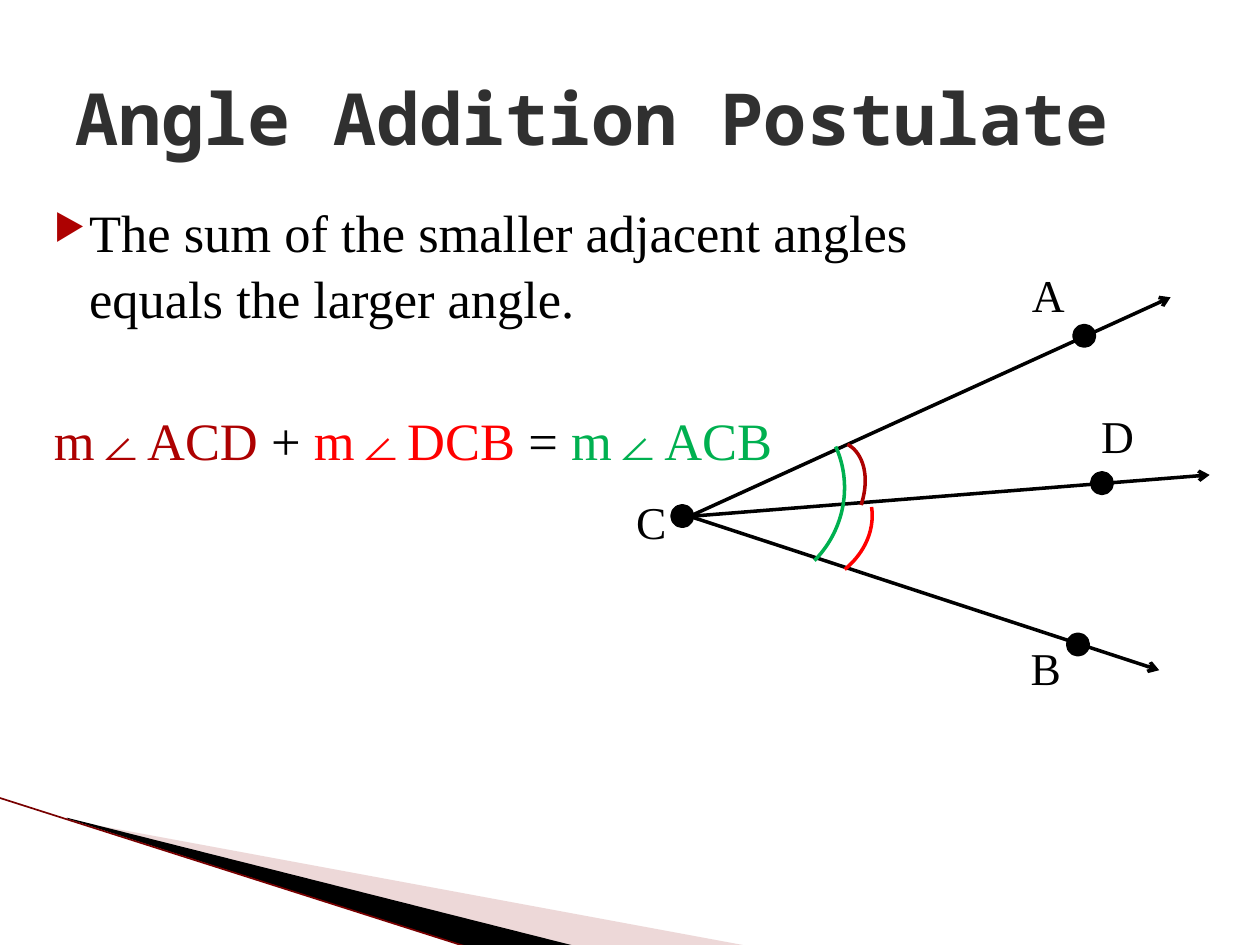
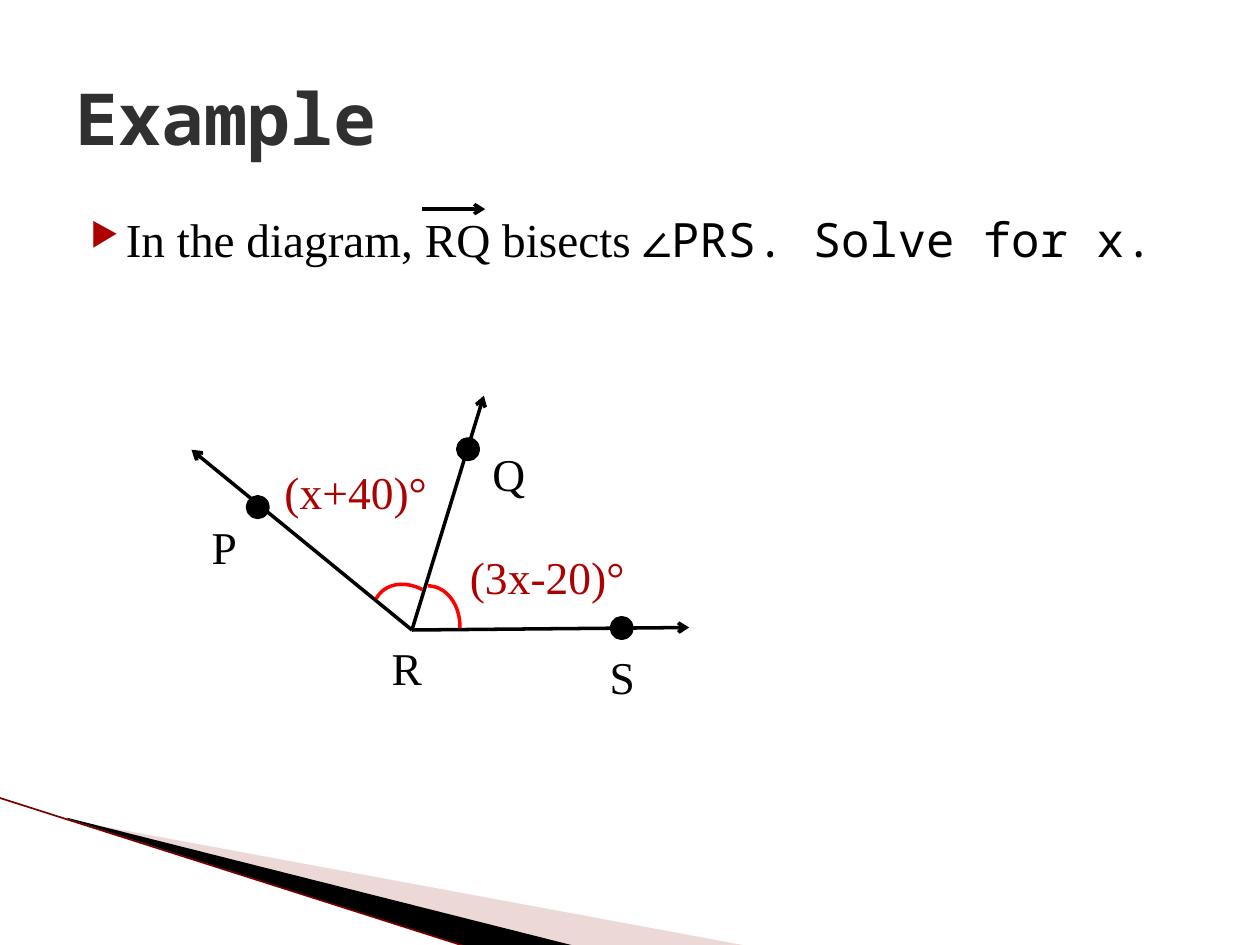
"""Build two geometry slides: the angle addition postulate and a bisector example."""
from lxml import etree
from pptx import Presentation
from pptx.dml.color import RGBColor
from pptx.enum.shapes import MSO_CONNECTOR, MSO_SHAPE
from pptx.enum.text import MSO_ANCHOR
from pptx.oxml.ns import qn
from pptx.util import Pt

STRAIGHT = MSO_CONNECTOR.STRAIGHT
ELLIPSE = MSO_SHAPE.OVAL
ARC = MSO_SHAPE.ARC
MIDDLE = MSO_ANCHOR.MIDDLE

SERIF = "Times New Roman"
MONO = "Noto Sans Mono"
BLACK = "000000"
CRIMSON = "AD0101"
RED = "FF0000"
GREEN = "00B050"
TITLE_GREY = "303030"
EDGE_RED = "780000"
BAND_PINK = "D29E9E"

DOT_SIZE = 9.4
LABEL_HEIGHT = 39

color = RGBColor.from_string


def add_line(page, start, end, line_color, width, arrow=True):
    line = page.shapes.add_connector(STRAIGHT, *(Pt(v) for v in start + end))
    line.line.color.rgb = color(line_color)
    line.line.width = Pt(width)
    if arrow:
        etree.SubElement(line.line._get_or_add_ln(), qn("a:tailEnd"), type="arrow")
    etree.SubElement(line._element.spPr, qn("a:effectLst"))


def add_text(page, frame, paragraphs, size, bold=False):
    box = page.shapes.add_textbox(*(Pt(v) for v in frame))
    box.text_frame.word_wrap = True
    for number, spans in enumerate(paragraphs):
        para = box.text_frame.paragraphs[0] if number == 0 else box.text_frame.add_paragraph()
        for text, font_name, font_color in spans:
            span = para.add_run()
            span.text = text
            span.font.name = font_name
            span.font.color.rgb = color(font_color)
        para.font.size = Pt(size)
        para.font.bold = bold
    return box


slides = [
    {
        "title": "Angle Addition Postulate",
        "body_frame": (15.1, 109.5, 549.4, 177.8),
        "body_size": 30,
        "line_spacing": 1.04,
        "body": [
            [("The sum of the smaller adjacent angles equals the larger angle.", SERIF, BLACK)],
            [
                ("m∠ACD ", SERIF, CRIMSON),
                ("+ ", SERIF, BLACK),
                ("m∠DCB ", SERIF, RED),
                ("= ", SERIF, BLACK),
                ("m∠ACB", SERIF, GREEN),
            ],
        ],
        "rays": [
            ((392.4, 295.2), (691.2, 271.4)),
            ((392.4, 294.5), (662.4, 383)),
            ((395.3, 294.5), (668.9, 169.9)),
        ],
        "dots": [(385.2, 290.2), (625, 271.4), (611.3, 363.6), (614.9, 187.2)],
        "labels": [
            ("A", 582.5, 149, 26, BLACK),
            ("B", 581.8, 362.2, 26, BLACK),
            ("C", 356.4, 278.6, 26, BLACK),
            ("D", 622.1, 229.7, 26, BLACK),
        ],
        "arcs": [
            ((441.4, 249.1, 49.7, 73.4), 29.5, 162, 202.02, CRIMSON),
            ((407.5, 247, 82.1, 100.1), 81.6, 162, 190.86, RED),
            ((367.9, 221.8, 113.8, 117.4), 44.5, 173.92, 0, GREEN),
        ],
    },
    {
        "title": "Example",
        "body_frame": (36, 116.6, 648, 356.4),
        "body_size": 27,
        "line_spacing": 1.0,
        "body": [
            [
                ("In the diagram, RQ bisects ", SERIF, BLACK),
                ("∠PRS. Solve for x.", MONO, BLACK),
            ],
        ],
        "rays": [
            ((235.4, 360), (109.4, 257)),
            ((235.4, 360), (393.8, 358.6)),
            ((235.4, 360), (276.5, 226.1)),
            ((241.2, 119.5), (277.2, 119.5)),
        ],
        "dots": [(142.6, 285.1), (262.8, 252), (350.6, 354.2)],
        "labels": [
            ("P", 113.8, 293, 31, BLACK),
            ("Q", 274.3, 251.3, 31, BLACK),
            ("R", 216.7, 362.2, 31, BLACK),
            ("S", 341.3, 367.2, 28, BLACK),
            ("(x+40)°", 155.5, 261.4, 117.4, CRIMSON),
            ("(3x-20)°", 261.4, 310.3, 131.8, CRIMSON),
        ],
        "arcs": [
            ((216, 331.2, 38.2, 49), 313.7, 156.16, 200.72, RED),
            ((224.6, 334.8, 38.2, 49), 5.4, 159.96, 212.09, RED),
        ],
    },
]

bands = [
    ([(39.6, 468.7), (428.4, 540.7), (328.3, 540.7), (39.6, 468)], BAND_PINK, 40),
    ([(38.2, 467.3), (329, 540.7), (267.8, 541.4), (38.9, 468)], BLACK, 100),
]

deck = Presentation()
deck.slide_width = Pt(720)
deck.slide_height = Pt(540)

for content in slides:
    page = deck.slides.add_slide(deck.slide_layouts[6])

    for corners, band_color, opacity in bands:
        points = [(Pt(x), Pt(y)) for x, y in corners]
        builder = page.shapes.build_freeform(*points[0])
        builder.add_line_segments(points[1:], close=True)
        band = builder.convert_to_shape()
        band.shadow.inherit = False
        band.line.fill.background()
        band.fill.solid()
        band.fill.fore_color.rgb = color(band_color)
        if opacity < 100:
            fill_color = band._element.spPr.find(".//" + qn("a:srgbClr"))
            etree.SubElement(fill_color, qn("a:alpha"), val=str(opacity * 1000))
    add_line(page, (-0.7, 455.8), (267.8, 541.4), EDGE_RED, 0.95, arrow=False)

    body = add_text(page, content["body_frame"], content["body"], content["body_size"])
    for number, para in enumerate(body.text_frame.paragraphs):
        para.line_spacing = content["line_spacing"]
        if number:
            para.space_before = Pt(44)
        properties = para._p.get_or_add_pPr()
        properties.set("marL", str(Pt(28.8)))
        properties.set("indent", str(Pt(-20.16)))
        if number == 0:
            bullet_color = etree.Element(qn("a:buClr"))
            etree.SubElement(bullet_color, qn("a:srgbClr"), val=CRIMSON)
            bullet_size = etree.Element(qn("a:buSzPct"), val="68000")
            bullet = etree.Element(qn("a:buChar"), char="▶")
            defaults = properties.find(qn("a:defRPr"))
            for element in (bullet_color, bullet_size, bullet):
                defaults.addprevious(element)

    title_spans = [[(content["title"], MONO, TITLE_GREY)]]
    title = add_text(page, (36, 21.6, 648, 90), title_spans, 41, bold=True)
    title.text_frame.vertical_anchor = MIDDLE

    for start, end in content["rays"]:
        add_line(page, start, end, BLACK, 2)

    for left, top in content["dots"]:
        dot = page.shapes.add_shape(ELLIPSE, Pt(left), Pt(top), Pt(DOT_SIZE), Pt(DOT_SIZE))
        dot.shadow.inherit = False
        dot.fill.solid()
        dot.fill.fore_color.rgb = color(BLACK)
        dot.line.color.rgb = color(BLACK)
        dot.line.width = Pt(4.33)

    for text, left, top, width, label_color in content["labels"]:
        add_text(page, (left, top, width, LABEL_HEIGHT), [[(text, SERIF, label_color)]], 26)

    for frame, rotation, start_angle, end_angle, arc_color in content["arcs"]:
        arc = page.shapes.add_shape(ARC, *(Pt(v) for v in frame))
        arc.shadow.inherit = False
        arc.rotation = rotation
        arc.adjustments[0] = start_angle
        arc.adjustments[1] = end_angle
        arc.fill.background()
        arc.line.color.rgb = color(arc_color)
        arc.line.width = Pt(2)

deck.save("out.pptx")
